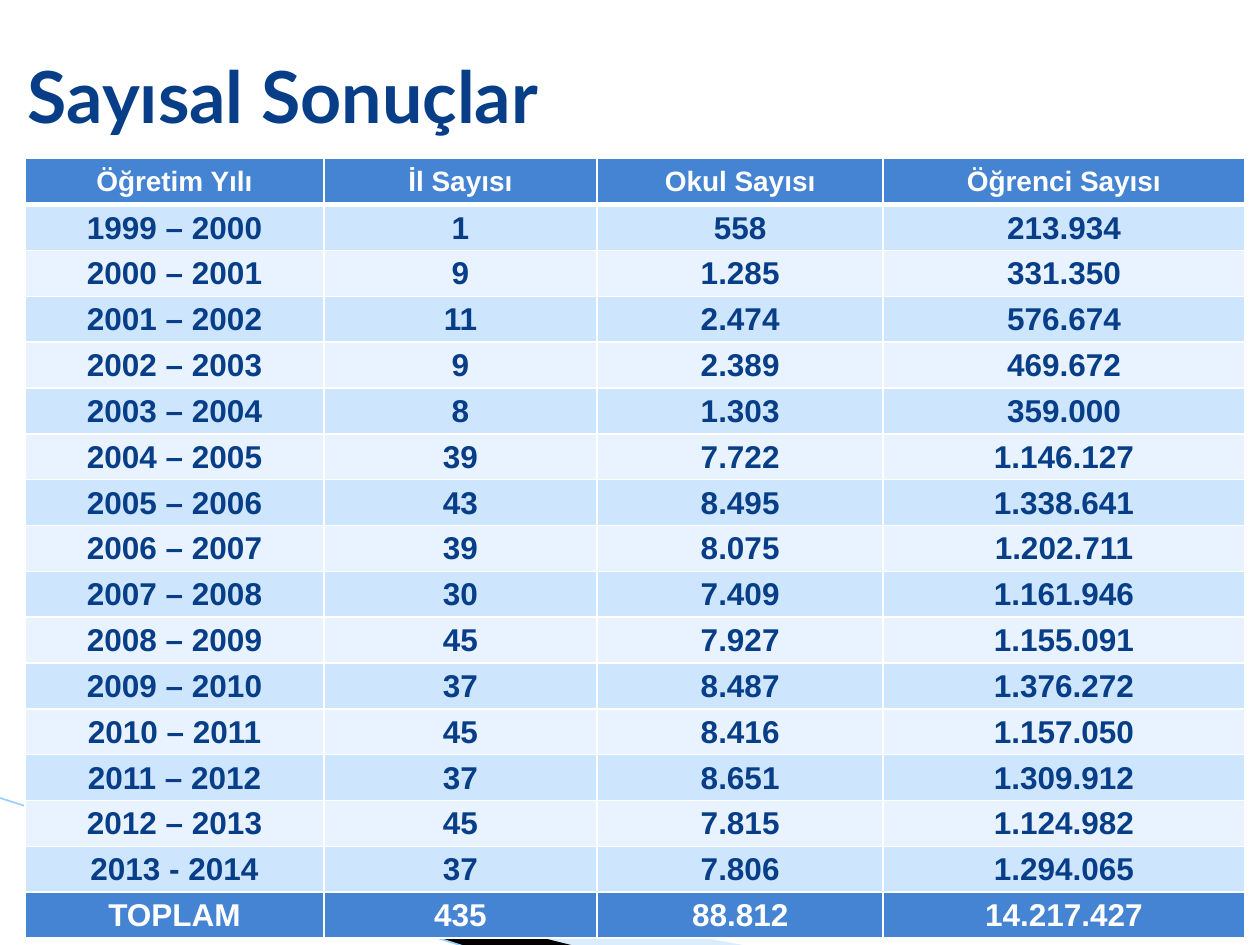
import pptx
import pptx.util
import pptx.dml.color
import pptx.enum.shapes
import pptx.enum.text
import pptx.oxml
import pptx.oxml.ns
import lxml.etree

Inches = pptx.util.Inches
Pt = pptx.util.Pt

NAVY, BLUE, WHITE = "073E87", "4584D3", "FFFFFF"
BANDS = ("CEE5FE", "E8F3FF")
WIDTHS = (2.37, 2.17, 2.27, 2.87)
ROWS = [
    ("Öğretim Yılı", "İl Sayısı", "Okul Sayısı", "Öğrenci Sayısı"),
    ("1999 – 2000", "1", "558", "213.934"),
    ("2000 – 2001", "9", "1.285", "331.350"),
    ("2001 – 2002", "11", "2.474", "576.674"),
    ("2002 – 2003", "9", "2.389", "469.672"),
    ("2003 – 2004", "8", "1.303", "359.000"),
    ("2004 – 2005", "39", "7.722", "1.146.127"),
    ("2005 – 2006", "43", "8.495", "1.338.641"),
    ("2006 – 2007", "39", "8.075", "1.202.711"),
    ("2007 – 2008", "30", "7.409", "1.161.946"),
    ("2008 – 2009", "45", "7.927", "1.155.091"),
    ("2009 – 2010", "37", "8.487", "1.376.272"),
    ("2010 – 2011", "45", "8.416", "1.157.050"),
    ("2011 – 2012", "37", "8.651", "1.309.912"),
    ("2012 – 2013", "45", "7.815", "1.124.982"),
    ("2013 - 2014", "37", "7.806", "1.294.065"),
    ("TOPLAM", "435", "88.812", "14.217.427"),
]


def rgb(code):
    """Turn a hex string into a colour."""
    return pptx.dml.color.RGBColor.from_string(code)


def style(para, size, face, color, align):
    """Format a paragraph and its runs in bold."""
    para.alignment = align
    for run in para.runs:
        run.font.size = Pt(size)
        run.font.name = face
        run.font.bold = True
        run.font.color.rgb = rgb(color)


def add_title(slide, text):
    """Place and format the title."""
    title = slide.shapes.title
    title.left, title.top = Inches(0.12), Inches(0.21)
    title.width, title.height = Inches(5.98), Inches(1.09)
    frame = title.text_frame
    frame.text = text
    frame.vertical_anchor = pptx.enum.text.MSO_ANCHOR.MIDDLE
    style(frame.paragraphs[0], 41, "Lato", NAVY, pptx.enum.text.PP_ALIGN.LEFT)


def add_wedge(slide, points, color, alpha=100):
    """Draw a filled outline without a line."""
    spots = [(Inches(x), Inches(y)) for x, y in points]
    build = slide.shapes.build_freeform(*spots[0])
    build.add_line_segments(spots[1:], close=True)
    wedge = build.convert_to_shape()
    wedge.shadow.inherit = False
    wedge.fill.solid()
    wedge.fill.fore_color.rgb = rgb(color)
    wedge.line.fill.background()
    if alpha < 100:
        tint = wedge.fill._xPr.find(".//" + pptx.oxml.ns.qn("a:srgbClr"))
        node = lxml.etree.SubElement(tint, pptx.oxml.ns.qn("a:alpha"))
        node.set("val", str(alpha * 1000))


def add_line(slide, start, end, color, width):
    """Draw a straight line."""
    ends = [Inches(v) for v in (*start, *end)]
    line = slide.shapes.add_connector(pptx.enum.shapes.MSO_CONNECTOR.STRAIGHT, *ends)
    line.line.color.rgb = rgb(color)
    line.line.width = Pt(width)
    lxml.etree.SubElement(line._element.spPr, pptx.oxml.ns.qn("a:effectLst"))


def set_edges(cell, top, bottom):
    """Give a cell white borders; top and bottom are widths in points."""
    props = cell._tc.get_or_add_tcPr()
    for side, width in (("L", 1), ("R", 1), ("T", top), ("B", bottom)):
        props.append(pptx.oxml.parse_xml(
            f'<a:ln{side} {pptx.oxml.ns.nsdecls("a")} w="{Pt(width)}">'
            f'<a:solidFill><a:srgbClr val="{WHITE}"/></a:solidFill></a:ln{side}>'))


def fill_cell(cell, text, size, color, back):
    """Write and format one table cell."""
    cell.text_frame.text = text
    cell.vertical_anchor = pptx.enum.text.MSO_ANCHOR.MIDDLE
    cell.margin_left = cell.margin_right = cell.margin_top = Inches(0.01)
    cell.margin_bottom = 0
    cell.fill.solid()
    cell.fill.fore_color.rgb = rgb(back)
    style(cell.text_frame.paragraphs[0], size, "Arial", color,
          pptx.enum.text.PP_ALIGN.CENTER)


def add_grid(slide):
    """Build the table of yearly results."""
    last = len(ROWS) - 1
    grid = slide.shapes.add_table(
        len(ROWS), len(WIDTHS), Inches(0.2), Inches(1.26),
        Inches(sum(WIDTHS)), Inches(6.19)).table
    grid.first_row = grid.horz_banding = False
    for col, width in zip(grid.columns, WIDTHS):
        col.width = Inches(width)
    for i, row in enumerate(ROWS):
        ends = i in (0, last)
        color = WHITE if ends else NAVY
        back = BLUE if ends else BANDS[(i - 1) % 2]
        for j, text in enumerate(row):
            cell = grid.cell(i, j)
            set_edges(cell, 3 if i == 1 else 1, 3 if i == 0 else 1)
            fill_cell(cell, text, 18 if i else 16, color, back)


def main():
    """Build the slide and save it."""
    deck = pptx.Presentation()
    deck.slide_width, deck.slide_height = Inches(10), Inches(7.5)
    slide = deck.slides.add_slide(deck.slide_layouts[5])
    add_wedge(slide, [(0.55, 6.5), (5.95, 7.51), (4.56, 7.51)], "A3D3FF", 40)
    add_wedge(slide, [(0.53, 6.49), (4.57, 7.51), (3.72, 7.52)], "000000")
    add_line(slide, (-0.01, 6.33), (3.71, 7.52), "99D0FF", 0.95)
    add_title(slide, "Sayısal Sonuçlar")
    add_grid(slide)
    deck.save("out.pptx")


if __name__ == "__main__":
    main()
